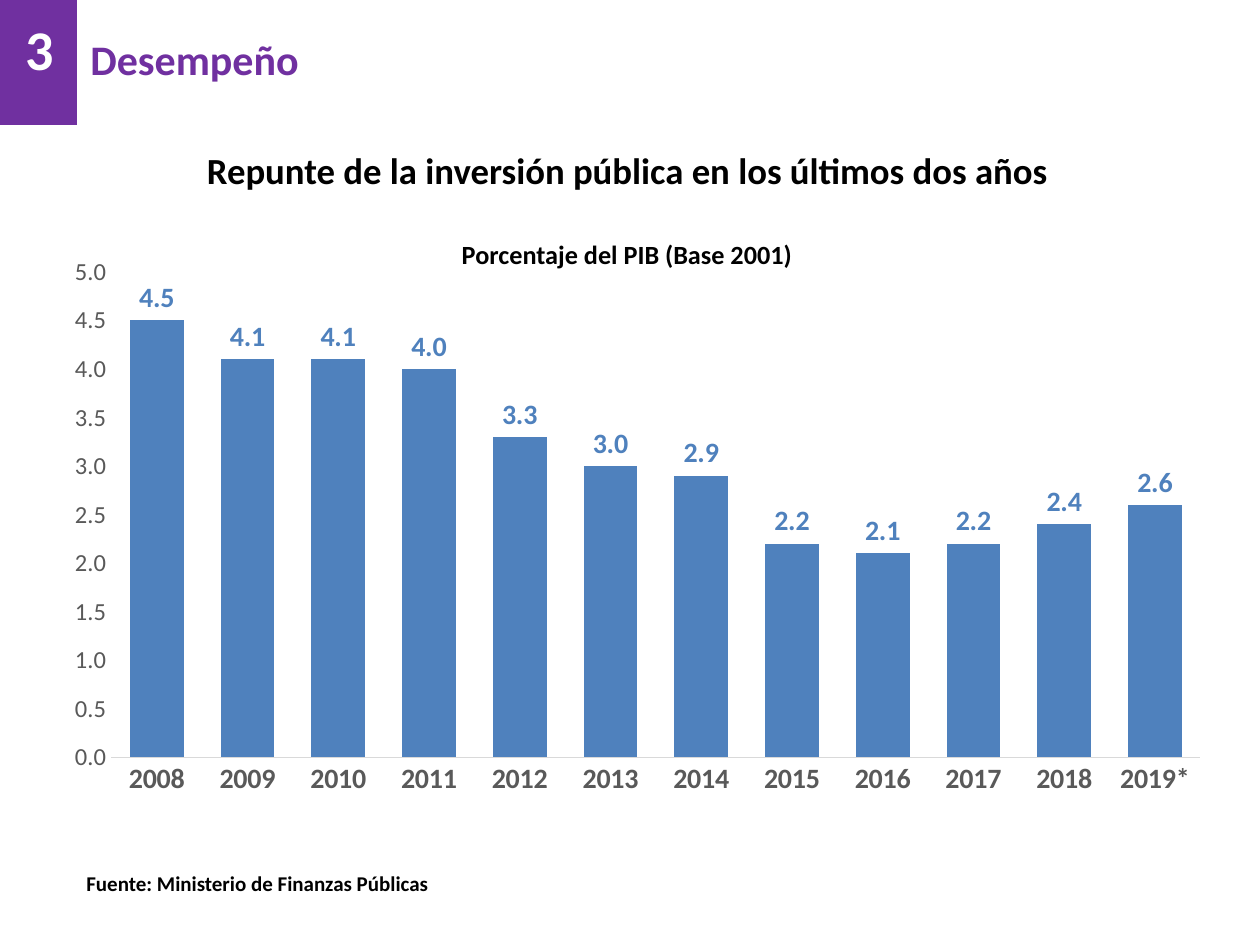
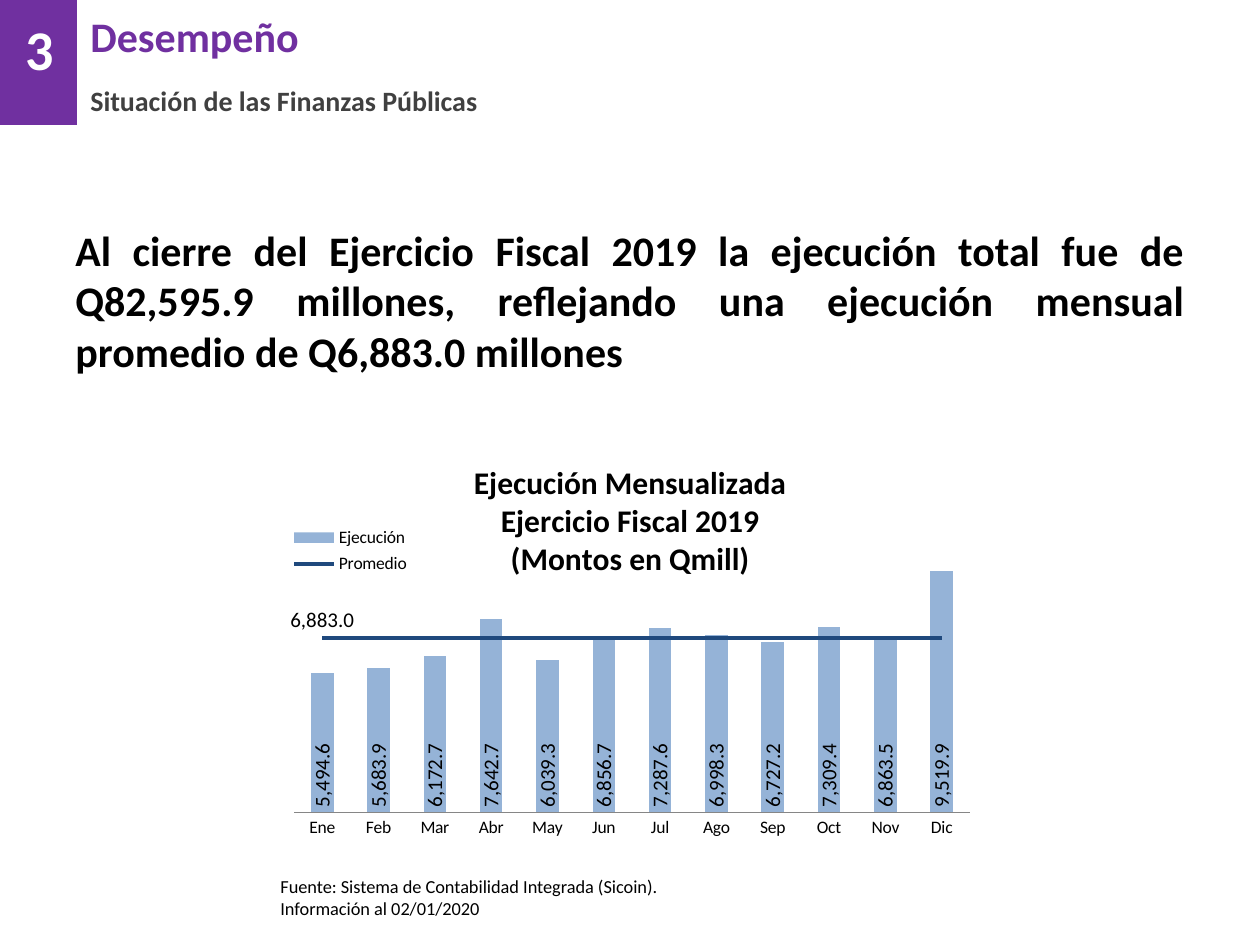
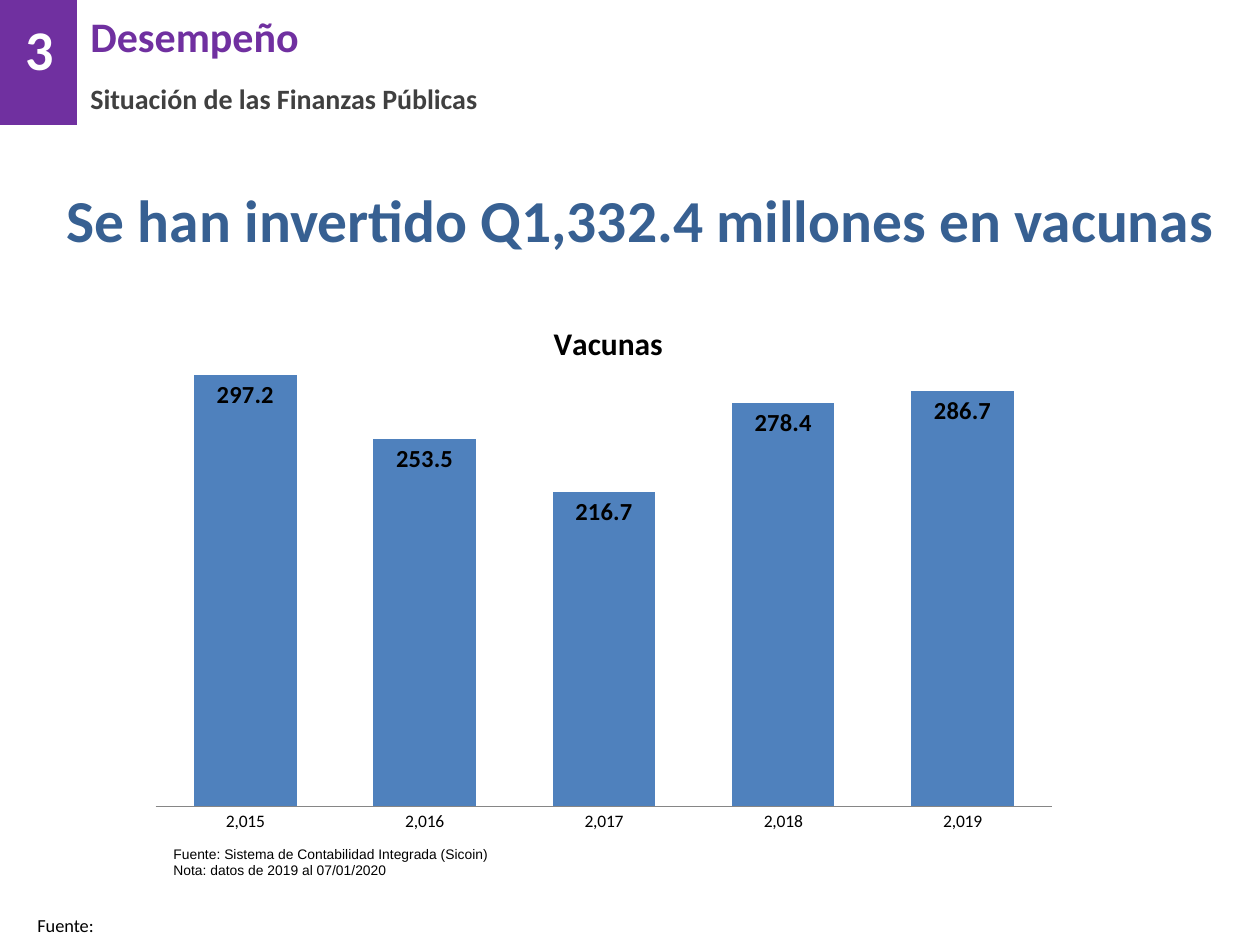
from lxml import etree
from pptx import Presentation
from pptx.chart.data import CategoryChartData
from pptx.dml.color import RGBColor
from pptx.enum.chart import XL_CHART_TYPE, XL_LABEL_POSITION, XL_LEGEND_POSITION, XL_MARKER_STYLE, XL_TICK_MARK
from pptx.enum.shapes import MSO_SHAPE
from pptx.enum.text import MSO_ANCHOR, PP_ALIGN
from pptx.oxml.ns import qn
from pptx.oxml.xmlchemy import OxmlElement
from pptx.util import Pt

PX = 914400 / 126  # EMU in one pixel
PAGE_SIZE = (1260, 945)
PURPLE, WHITE, BLACK, GRAY = "7030A0", "FFFFFF", "000000", "404040"
BLUE, LIGHT_BLUE, NAVY, HEADLINE_BLUE = "4F81BD", "95B3D7", "1F497D", "376092"
AXIS_TEXT, PALE_LINE, AXIS_LINE = "595959", "D9D9D9", "868686"
FONT = "Calibri"
ONE_DECIMAL = "#,##0.0"
BUDGET_TOPIC = "Situación de las Finanzas Públicas"


def color(value):
    return RGBColor.from_string(value)


def emu(*lengths):
    return [round(length * PX) for length in lengths]


def style_font(font, size, fill=BLACK, bold=False, name=FONT):
    font.size, font.bold, font.name = Pt(size), bold, name
    font.color.rgb = color(fill)


def write(frame, text, align=PP_ALIGN.LEFT, **font_format):
    """Fill a text frame with one paragraph per line of text."""
    for index, line in enumerate(text.split("\n")):
        para = frame.add_paragraph() if index else frame.paragraphs[0]
        para.alignment = align
        span = para.add_run()
        span.text = line
        style_font(span.font, **font_format)


def add_text(page, box, text, anchor=MSO_ANCHOR.TOP, **text_format):
    frame = page.shapes.add_textbox(*emu(*box)).text_frame
    frame.word_wrap = True
    frame.vertical_anchor = anchor
    write(frame, text, **text_format)


def add_header(page, title_top, topic=None, topic_top=77):
    """Section number on its purple band, section title and optional topic."""
    band = page.shapes.add_shape(MSO_SHAPE.RECTANGLE, *emu(0, 0, 77, 125))
    band.shadow.inherit = False
    band.fill.solid()
    band.fill.fore_color.rgb = color(PURPLE)
    band.line.fill.background()
    add_text(page, (13, 8, 70, 80), "3", size=32, fill=WHITE, bold=True)
    add_text(page, (78, title_top, 1086, 63), "Desempeño", size=24, fill=PURPLE, bold=True)
    if topic:
        add_text(page, (78, topic_top, 1169, 62), topic, size=16, fill=GRAY, bold=True)


def place(part, position, **fractions):
    """Give a chart part a manual layout, as fractions of the chart."""
    layout = part.find(qn("c:layout"))
    if layout is None:
        layout = OxmlElement("c:layout")
        part.insert(position, layout)
    for child in list(layout):
        layout.remove(child)
    manual = etree.SubElement(layout, qn("c:manualLayout"))
    if part.tag == qn("c:plotArea"):
        etree.SubElement(manual, qn("c:layoutTarget")).set("val", "inner")
    for key in "xy":
        etree.SubElement(manual, qn(f"c:{key}Mode")).set("val", "edge")
    for key, value in fractions.items():
        etree.SubElement(manual, qn(f"c:{key}")).set("val", str(value))


def add_columns(page, box, categories, series, top, gap, plot, fill=BLUE, line=AXIS_LINE):
    """Column chart without gridlines; plot holds the inner plot area."""
    data = CategoryChartData(number_format=ONE_DECIMAL)
    data.categories = categories
    for name, values in series.items():
        data.add_series(name, values)
    chart = page.shapes.add_chart(XL_CHART_TYPE.COLUMN_CLUSTERED, *emu(*box), data).chart
    chart.has_title = chart.has_legend = False
    style_font(chart.font, 10)
    place(chart._chartSpace.find(".//" + qn("c:plotArea")), 0, **dict(zip("xywh", plot)))

    columns = chart.plots[0]
    columns.gap_width = gap
    columns.vary_by_categories = False
    bars = columns.series[0]
    bars.format.fill.solid()
    bars.format.fill.fore_color.rgb = color(fill)

    scale = chart.value_axis
    scale.minimum_scale, scale.maximum_scale = 0, top
    scale.has_major_gridlines = False
    for axis in (scale, chart.category_axis):
        axis.major_tick_mark = axis.minor_tick_mark = XL_TICK_MARK.NONE
    chart.category_axis.format.line.color.rgb = color(line)
    chart.category_axis.format.line.width = Pt(0.75)
    return chart


def label_bars(chart, position, **font_format):
    labels = chart.plots[0].series[0].data_labels
    labels.show_value = True
    labels.number_format, labels.number_format_is_linked = ONE_DECIMAL, False
    labels.position = position
    style_font(labels.font, **font_format)
    return labels


def title_chart(chart, text, x, y):
    chart.has_title = True
    write(chart.chart_title.text_frame, text, PP_ALIGN.CENTER, size=18, bold=True)
    place(chart.chart_title._element, 1, x=x, y=y)


def turn_into_line(chart):
    """Move the second column series to a line plot on the same axes."""
    bars = chart._chartSpace.find(".//" + qn("c:barChart"))
    moved = bars.findall(qn("c:ser"))[1]
    for bar_setting in moved.findall(qn("c:invertIfNegative")):
        moved.remove(bar_setting)
    lines = OxmlElement("c:lineChart")
    etree.SubElement(lines, qn("c:grouping")).set("val", "standard")
    etree.SubElement(lines, qn("c:varyColors")).set("val", "0")
    lines.append(moved)
    etree.SubElement(lines, qn("c:marker")).set("val", "1")
    for axis_id in bars.findall(qn("c:axId")):
        etree.SubElement(lines, qn("c:axId")).set("val", axis_id.get("val"))
    bars.addnext(lines)
    return chart.plots[1].series[0]


def build_investment(page):
    add_header(page, title_top=27)
    years = [str(year) for year in range(2008, 2019)] + ["2019*"]
    shares = (4.5, 4.1, 4.1, 4.0, 3.3, 3.0, 2.9, 2.2, 2.1, 2.2, 2.4, 2.6)
    chart = add_columns(page, (54, 232, 1147, 571), years, {"Inversión": shares}, top=5, gap=69,
                        plot=(0.05, 0.07, 0.95, 0.85), line=PALE_LINE)
    label_bars(chart, XL_LABEL_POSITION.OUTSIDE_END, size=16, fill=BLUE, bold=True)
    style_font(chart.category_axis.tick_labels.font, 16, AXIS_TEXT, True)
    scale = chart.value_axis
    scale.major_unit = 0.5
    scale.format.line.fill.background()
    scale.tick_labels.number_format = ONE_DECIMAL
    scale.tick_labels.number_format_is_linked = False
    style_font(scale.tick_labels.font, 14, AXIS_TEXT)

    # Headline, chart heading and source
    add_text(page, (54, 101, 1147, 137), "Repunte de la inversión pública en los últimos dos años",
             MSO_ANCHOR.MIDDLE, align=PP_ALIGN.CENTER, size=21, bold=True)
    add_text(page, (345, 232, 564, 44), "Porcentaje del PIB (Base 2001)",
             align=PP_ALIGN.CENTER, size=15, bold=True)
    add_text(page, (74, 864, 627, 38), "Fuente: Ministerio de Finanzas Públicas", size=12, bold=True)


def build_execution(page):
    add_header(page, title_top=4, topic=BUDGET_TOPIC)
    add_text(page, (63, 221, 1134, 158),
             "Al cierre del Ejercicio Fiscal 2019 la ejecución total fue de Q82,595.9 millones, "
             "reflejando una ejecución mensual promedio de Q6,883.0 millones",
             MSO_ANCHOR.MIDDLE, align=PP_ALIGN.JUSTIFY, size=24, bold=True)

    # Monthly columns with the average as a line
    months = "Ene Feb Mar Abr May Jun Jul Ago Sep Oct Nov Dic".split()
    spent = (5494.6, 5683.9, 6172.7, 7642.7, 6039.3, 6856.7,
             7287.6, 6998.3, 6727.2, 7309.4, 6863.5, 9519.9)
    chart = add_columns(page, (273, 437, 704, 422), months,
                        {"Ejecución": spent, "Promedio": [6883.0] * len(months)}, top=10000,
                        gap=150, plot=(0.03, 0.29, 0.96, 0.6), fill=LIGHT_BLUE)
    chart.value_axis.visible = False
    average = turn_into_line(chart)
    average.format.line.color.rgb = color(NAVY)
    average.format.line.width = Pt(2.25)
    average.marker.style = XL_MARKER_STYLE.NONE
    average.smooth = False
    average.data_labels.show_value = False
    first_label = average.points[0].data_label
    style_font(first_label.font, 12)
    first_label.position = XL_LABEL_POSITION.ABOVE

    labels = label_bars(chart, XL_LABEL_POSITION.INSIDE_BASE, size=12)
    turned = labels._element.find(qn("c:txPr")).find(qn("a:bodyPr"))
    turned.set("rot", "-5400000")
    turned.set("vert", "horz")

    # Chart title, legend and source
    title_chart(chart, "Ejecución Mensualizada\nEjercicio Fiscal 2019\n(Montos en Qmill)", 0.28, 0.05)
    chart.has_legend = True
    chart.legend.position = XL_LEGEND_POSITION.RIGHT
    chart.legend.include_in_layout = False
    style_font(chart.legend.font, 10)
    place(chart.legend._element, 1, x=0.02, y=0.2, w=0.18, h=0.14)
    add_text(page, (268, 869, 725, 59),
             "Fuente: Sistema de Contabilidad Integrada (Sicoin).\nInformación al 02/01/2020", size=10.5)


def build_vaccines(page):
    add_header(page, title_top=4, topic=BUDGET_TOPIC, topic_top=75)
    add_text(page, (49, 169, 1182, 100), "Se han invertido Q1,332.4 millones en vacunas",
             MSO_ANCHOR.MIDDLE, align=PP_ALIGN.CENTER, size=34, fill=HEADLINE_BLUE, bold=True)
    years = [f"{year:,}" for year in range(2015, 2020)]
    chart = add_columns(page, (137, 282, 934, 558), years,
                        {"Vacunas": (297.2, 253.5, 216.7, 278.4, 286.7)}, top=300, gap=75,
                        plot=(0.02, 0.16, 0.96, 0.78))
    chart.value_axis.visible = False
    label_bars(chart, XL_LABEL_POSITION.INSIDE_END, size=14, bold=True)
    title_chart(chart, "Vacunas", 0.44, 0.06)

    # Sources
    add_text(page, (161, 839, 512, 47),
             "Fuente: Sistema de Contabilidad Integrada (Sicoin)\nNota: datos de 2019 al 07/01/2020",
             size=7.9, name="Arial")
    add_text(page, (25, 908, 556, 37), "Fuente:", size=10.5)


def main():
    deck = Presentation()
    deck.slide_width, deck.slide_height = emu(*PAGE_SIZE)
    for build in (build_investment, build_execution, build_vaccines):
        build(deck.slides.add_slide(deck.slide_layouts[6]))
    deck.save("out.pptx")


if __name__ == "__main__":
    main()
